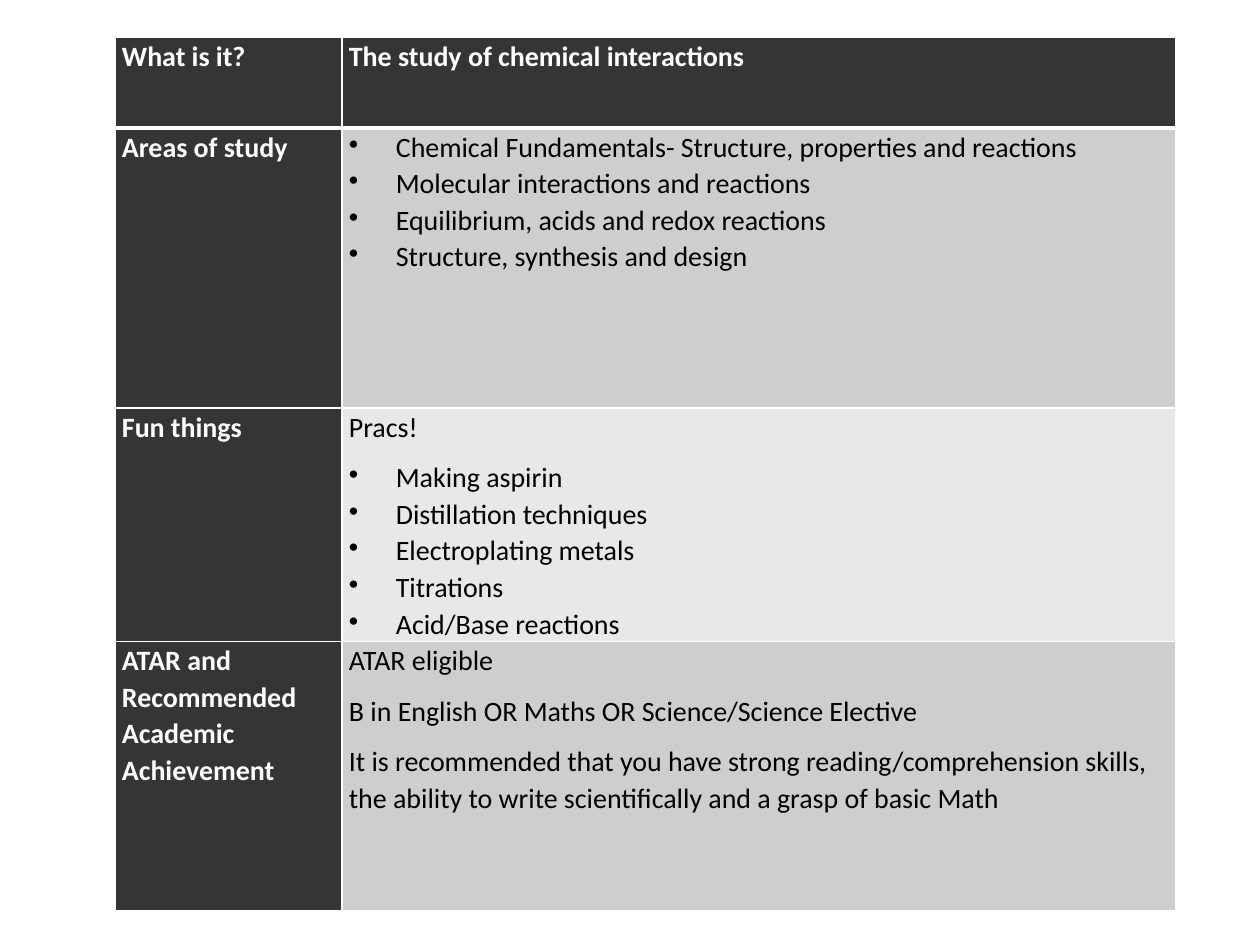
from lxml.etree import SubElement
from pptx import Presentation
from pptx.dml.color import RGBColor
from pptx.oxml import parse_xml
from pptx.oxml.ns import nsdecls, qn
from pptx.util import Pt

PX = 914400 // 126
DARK, MID, LIGHT = "353535", "CECECE", "E8E8E8"
WHITE, BLACK = "FFFFFF", "000000"
BULLET = "• "
MARGIN, INDENT = 7 * PX, 47 * PX


def write(cell, lines, color, bold=False, size=16, font="Calibri"):
    """Fill a cell with paragraphs; lines that start with BULLET become list items."""
    frame = cell.text_frame
    for index, line in enumerate(lines):
        para = frame.add_paragraph() if index else frame.paragraphs[0]
        listed = line.startswith(BULLET)
        if listed:
            props = para._p.get_or_add_pPr()
            props.set("marL", str(INDENT))
            props.set("indent", str(-INDENT))
            SubElement(props, qn("a:buChar"), char=BULLET.strip())
        para.line_spacing = 1.07
        para.space_after = Pt(0 if listed and line != lines[-1] else 8)
        span = para.add_run()
        span.text = line.removeprefix(BULLET)
        span.font.name, span.font.size, span.font.bold = font, Pt(size), bold
        span.font.color.rgb = RGBColor.from_string(color)


def style(cell, fill, top=1, bottom=1):
    """Set fill, margins and white borders, with border widths in points."""
    cell.margin_left = cell.margin_right = MARGIN
    cell.margin_top = cell.margin_bottom = 0
    cell.fill.solid()
    cell.fill.fore_color.rgb = RGBColor.from_string(fill)
    props = cell._tc.get_or_add_tcPr()
    widths = {"lnL": 1, "lnR": 1, "lnT": top, "lnB": bottom}
    for place, (side, width) in enumerate(widths.items()):
        props.insert(place, parse_xml(
            f'<a:{side} {nsdecls("a")} w="{Pt(width)}"><a:solidFill>'
            f'<a:srgbClr val="{WHITE}"/></a:solidFill></a:{side}>'))


# Row height, fill of the right cell, label, lines
rows = [
    (91, DARK, "What is it?", ["The study of chemical interactions"]),
    (280, MID, "Areas of study", [
        "• Chemical Fundamentals- Structure, properties and reactions",
        "• Molecular interactions and reactions",
        "• Equilibrium, acids and redox reactions",
        "• Structure, synthesis and design",
    ]),
    (193, LIGHT, "Fun things", [
        "Pracs!",
        "• Making aspirin",
        "• Distillation techniques",
        "• Electroplating metals",
        "• Titrations",
        "• Acid/Base reactions",
    ]),
    (269, MID, "ATAR and Recommended Academic Achievement", [
        "ATAR eligible",
        "B in English OR Maths OR Science/Science Elective",
        "It is recommended that you have strong reading/comprehension skills, "
        "the ability to write scientifically and a grasp of basic Math",
    ]),
]
columns = [227, 834]

deck = Presentation()
deck.slide_width, deck.slide_height = 1260 * PX, 945 * PX
page = deck.slides.add_slide(deck.slide_layouts[6])

holder = page.shapes.add_table(len(rows), len(columns), 115 * PX, 37 * PX,
                               sum(columns) * PX, 868 * PX)
table = holder.table
for column, width in zip(table.columns, columns):
    column.width = width * PX

for number, (height, fill, label, lines) in enumerate(rows):
    table.rows[number].height = height * PX
    header = number == 0
    label_cell, detail_cell = table.rows[number].cells
    for cell, shade in ((label_cell, DARK), (detail_cell, fill)):
        style(cell, shade, top=3 if number == 1 else 1, bottom=3 if header else 1)
    write(label_cell, [label], WHITE, bold=True)
    write(detail_cell, lines, WHITE if header else BLACK, bold=header)
holder.height = 868 * PX

deck.save("out.pptx")
